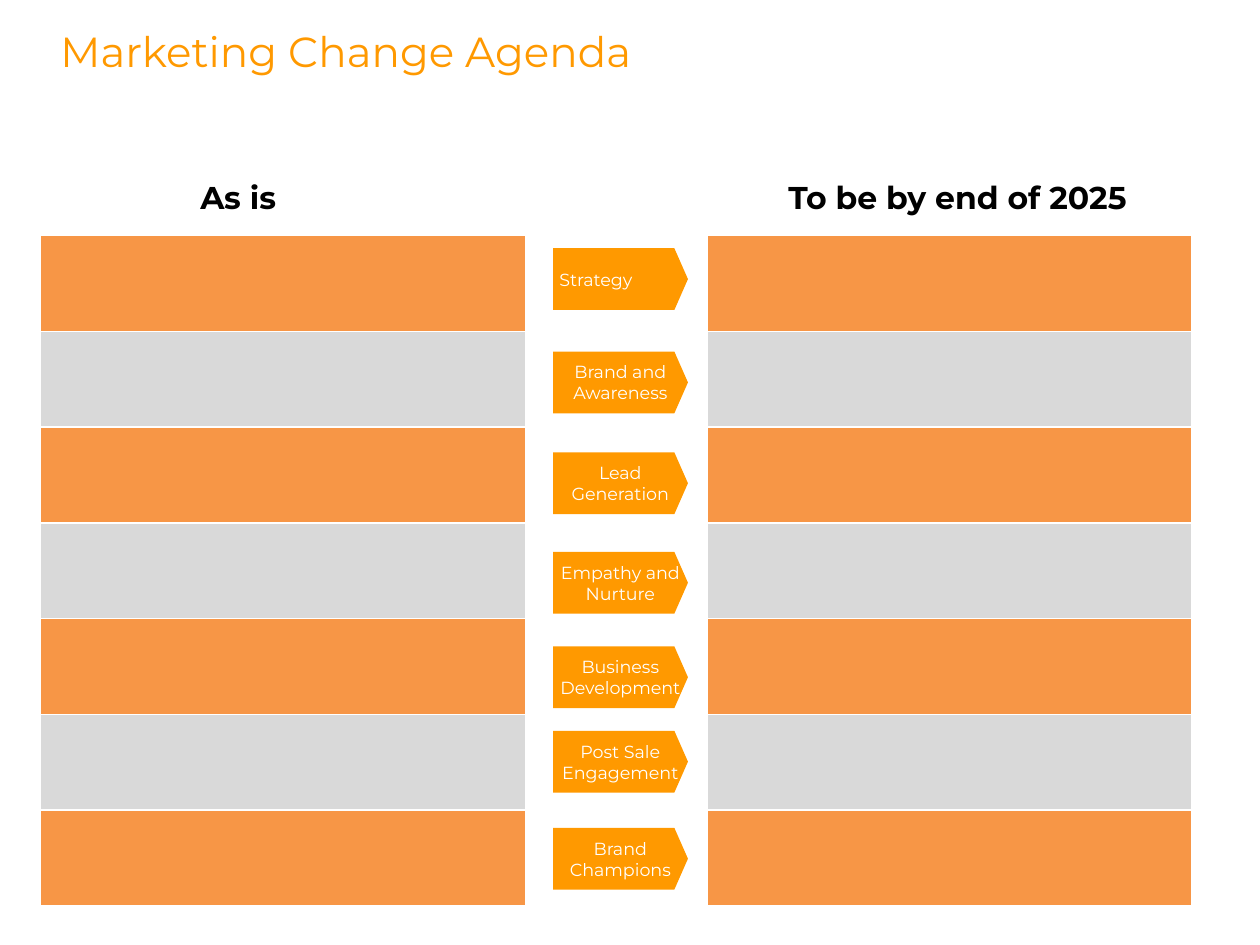
from lxml import etree
from pptx import Presentation
from pptx.dml.color import RGBColor
from pptx.enum.shapes import MSO_SHAPE
from pptx.enum.text import MSO_ANCHOR, MSO_AUTO_SIZE, PP_ALIGN
from pptx.oxml.ns import qn
from pptx.util import Inches, Pt

PENTAGON = MSO_SHAPE.PENTAGON
TOP, MIDDLE = MSO_ANCHOR.TOP, MSO_ANCHOR.MIDDLE
LEFT, CENTER = PP_ALIGN.LEFT, PP_ALIGN.CENTER
NO_AUTOFIT = MSO_AUTO_SIZE.NONE

FONT = "Montserrat"
ORANGE, ROW_ORANGE, ROW_GREY = "FF9900", "F79646", "D9D9D9"
WHITE, BLACK = "FFFFFF", "000000"
ROW_COUNT, ROW_HEIGHT = 7, 0.76
STAGES = [
    ("Strategy", 1.97, LEFT),
    ("Brand and Awareness", 2.79, CENTER),
    ("Lead Generation", 3.59, CENTER),
    ("Empathy and Nurture", 4.38, CENTER),
    ("Business Development", 5.13, CENTER),
    ("Post Sale Engagement", 5.8, CENTER),
    ("Brand Champions", 6.57, CENTER),
]


def rgb(hex_colour):
    """Turn a hex string into a colour."""
    return RGBColor.from_string(hex_colour)


def write_text(frame, text, size, colour, bold=False, align=CENTER,
               anchor=MIDDLE, left=0.05, right=0.05, spacing=None):
    """Fill a text frame with one formatted paragraph."""
    frame.word_wrap = True
    frame.auto_size = NO_AUTOFIT
    frame.vertical_anchor = anchor
    frame.margin_left, frame.margin_right = Inches(left), Inches(right)
    frame.margin_top = frame.margin_bottom = Inches(0.05)
    paragraph = frame.paragraphs[0]
    paragraph.alignment = align
    paragraph.line_spacing = spacing
    run = paragraph.add_run()
    run.text = text
    run.font.name = FONT
    run.font.size = Pt(size)
    run.font.bold = bold
    run.font.color.rgb = rgb(colour)


def set_title(slide, text):
    """Place and format the slide title."""
    title = slide.shapes.title
    title.left, title.top = Inches(0.08), Inches(0.05)
    title.width, title.height = Inches(8.69), Inches(0.91)
    write_text(title.text_frame, text, 24, ORANGE, align=LEFT, anchor=TOP,
               left=0.4, spacing=1.25)


def add_heading(slide, text, left, width):
    """Add a bold heading above a column."""
    heading = slide.shapes.add_textbox(
        Inches(left), Inches(1.32), Inches(width), Inches(0.49))
    write_text(heading.text_frame, text, 18, BLACK, bold=True)


def add_stage(slide, text, top, align):
    """Add an orange stage pointing from the left table to the right one."""
    stage = slide.shapes.add_shape(
        PENTAGON, Inches(4.39), Inches(top), Inches(1.07), Inches(0.49))
    stage.adjustments[0] = 0.22
    stage.shadow.inherit = False
    stage.fill.solid()
    stage.fill.fore_color.rgb = rgb(ORANGE)
    stage.line.fill.background()
    write_text(stage.text_frame, text, 10, WHITE, align=align, right=0)


def add_borders(cell, colour):
    """Draw a one-point border on every side of a cell."""
    properties = cell._tc.get_or_add_tcPr()
    for side in ("a:lnL", "a:lnR", "a:lnT", "a:lnB"):
        border = etree.SubElement(properties, qn(side), w=str(Pt(1)))
        fill = etree.SubElement(border, qn("a:solidFill"))
        etree.SubElement(fill, qn("a:srgbClr"), val=colour)


def add_state_table(slide, left):
    """Add a one-column table with alternating row colours."""
    table = slide.shapes.add_table(
        ROW_COUNT, 1, Inches(left), Inches(1.87),
        Inches(3.85), Inches(ROW_COUNT * ROW_HEIGHT)).table
    for index, row in enumerate(table.rows):
        row.height = Inches(ROW_HEIGHT)
        cell = row.cells[0]
        add_borders(cell, WHITE)
        cell.fill.solid()
        cell.fill.fore_color.rgb = rgb(ROW_GREY if index % 2 else ROW_ORANGE)


def main():
    """Build the marketing change agenda slide."""
    deck = Presentation()
    deck.slide_width, deck.slide_height = Inches(10), Inches(7.5)
    slide = deck.slides.add_slide(deck.slide_layouts.get_by_name("Title Only"))
    set_title(slide, "Marketing Change Agenda")
    add_heading(slide, "As is", 0.2, 3.38)
    add_heading(slide, "To be by end of 2025", 5.9, 3.4)
    for text, top, align in STAGES:
        add_stage(slide, text, top, align)
    for left in (0.32, 5.61):
        add_state_table(slide, left)
    deck.save("out.pptx")


if __name__ == "__main__":
    main()
